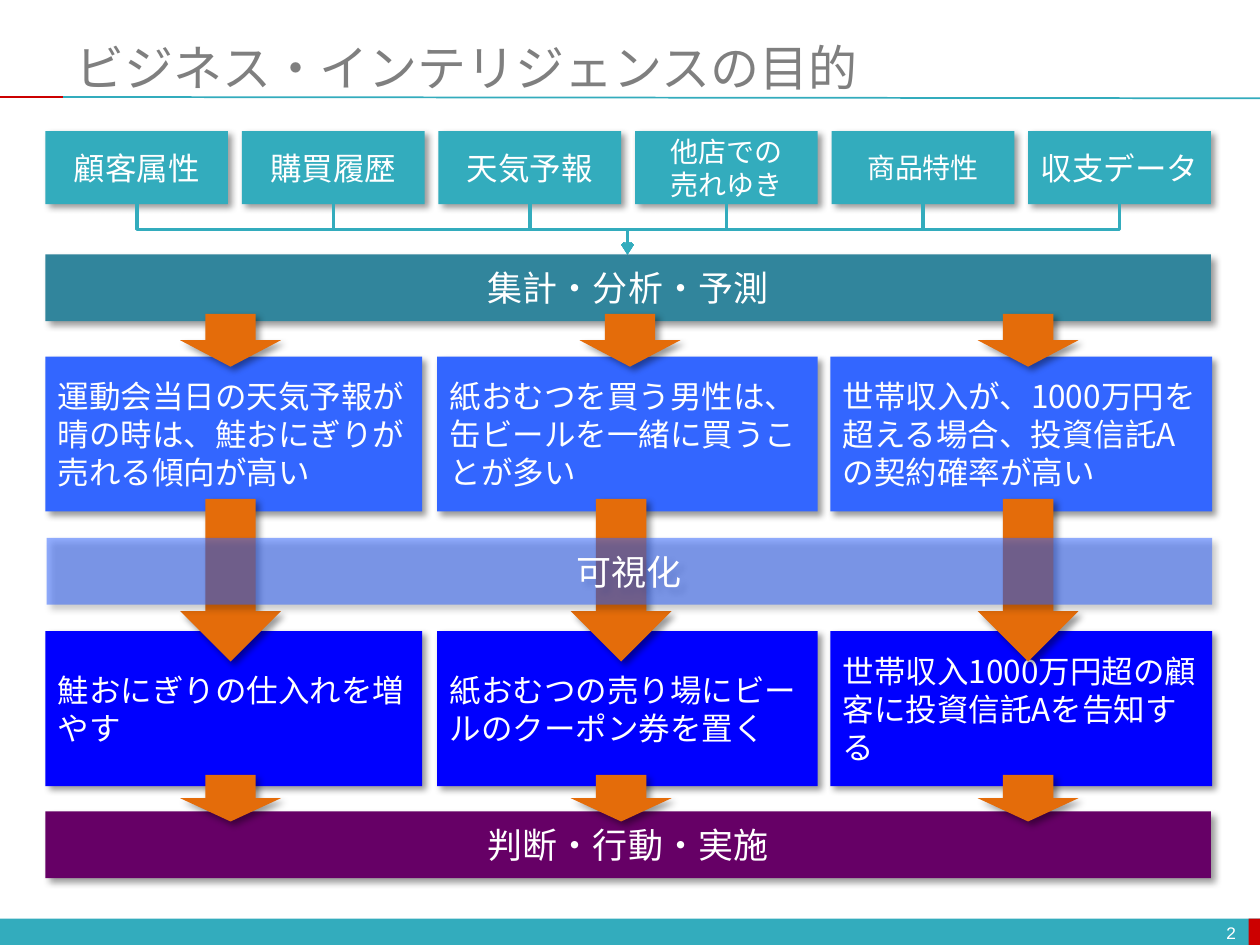
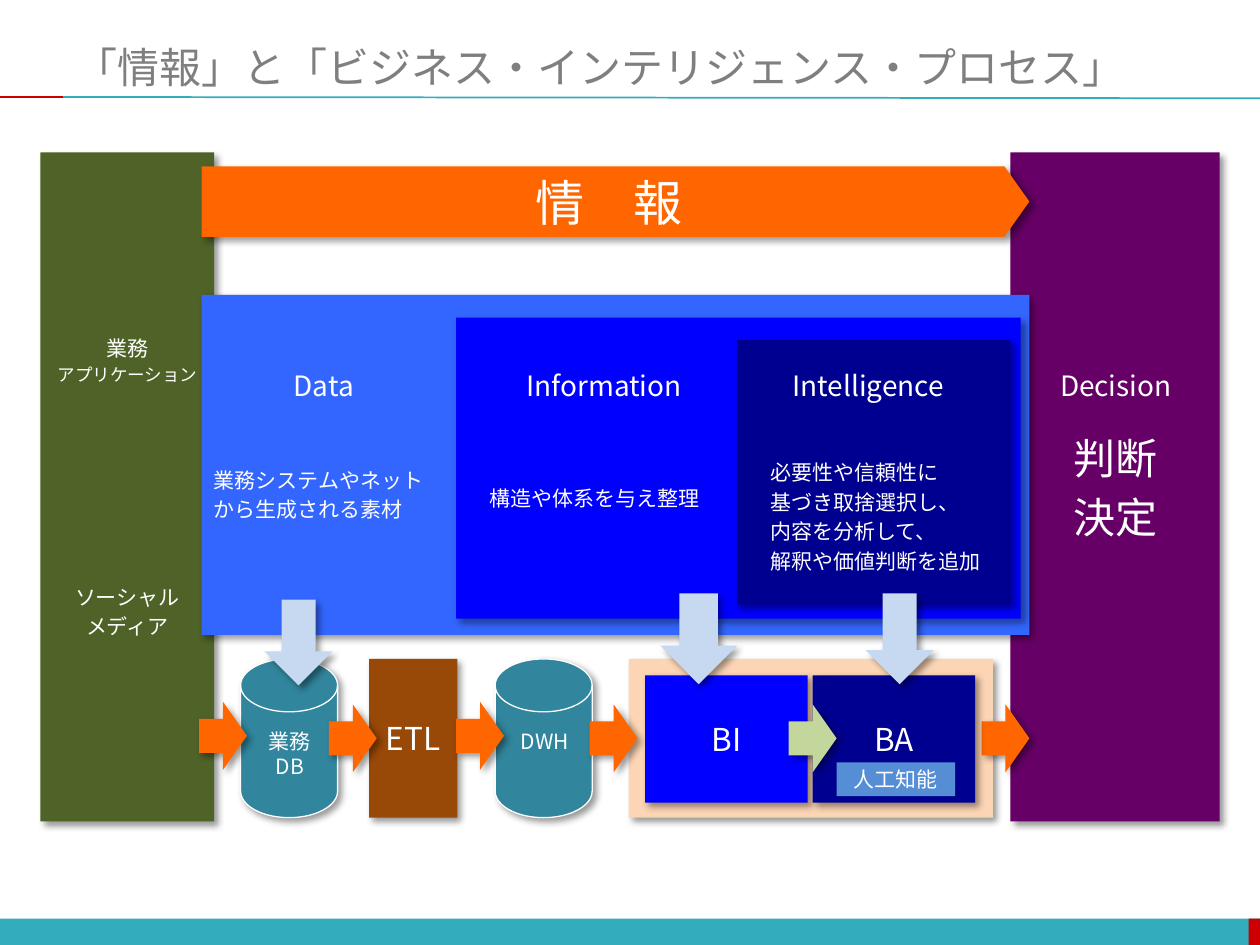
from dataclasses import dataclass

from lxml import etree
from pptx import Presentation
from pptx import util as u
from pptx.dml.color import RGBColor
from pptx.enum import shapes, text
from pptx.oxml import ns

COLUMNS, ROWS = 100, 75
CELL = u.Inches(0.1)
KIND = shapes.MSO_SHAPE
LINE = shapes.MSO_CONNECTOR
LEFT, CENTER, RIGHT = text.PP_ALIGN.LEFT, text.PP_ALIGN.CENTER, text.PP_ALIGN.RIGHT


@dataclass(frozen=True)
class Theme:
    body_font: str = "Noto Sans CJK JP"
    title_font: str = "Calibri"
    number_font: str = "Courier New"
    tiny: int = 10
    small: int = 12
    label: int = 16
    body: int = 18
    band: int = 20
    large: int = 24
    huge: int = 28
    white: str = "FFFFFF"
    gray: str = "7F7F7F"
    teal: str = "33ACBD"
    deep_teal: str = "31859C"
    red: str = "CC0000"
    sky: str = "3366FF"
    blue: str = "0000FF"
    navy: str = "000090"
    purple: str = "660066"
    rust: str = "E46C0A"
    orange: str = "FF6600"
    olive: str = "4F6228"
    brown: str = "984807"
    peach: str = "FCD5B5"
    pale_blue: str = "C6D9F1"
    pale_green: str = "C3D69B"
    steel: str = "558ED5"


THEME = Theme()


def cells(*counts):
    return [round(count * CELL) for count in counts]


def child(parent, tag, **attributes):
    return etree.SubElement(parent, ns.qn(tag), **attributes)


def write(frame, lines, size, align=CENTER, color=THEME.white, font=THEME.body_font, spread=0):
    for index, line in enumerate(lines):
        wording, points = line if isinstance(line, tuple) else (line, size)
        para = frame.paragraphs[0] if index == 0 else frame.add_paragraph()
        para.text = wording
        para.alignment = align
        para.line_spacing = u.Pt(round(points * 1.2, 1))
        if index:
            para.space_before = u.Pt(round(points * spread, 1))
        para.font.size = u.Pt(points)
        para.font.color.rgb = RGBColor.from_string(color)
        para.font.name = font
        child(para.font._element, "a:ea", typeface=font)


def add_label(page, area, lines, size, wrap=False, anchor=text.MSO_ANCHOR.TOP, **style):
    frame = page.shapes.add_textbox(*cells(*area)).text_frame
    frame.word_wrap = wrap
    frame.vertical_anchor = anchor
    write(frame, lines, size, **style)


def add_block(page, area, fill, lines=(), size=THEME.body, kind=KIND.RECTANGLE,
              shadow=True, drop=0, indent=0, **style):
    block = page.shapes.add_shape(kind, *cells(*area))
    block.fill.solid()
    block.fill.fore_color.rgb = RGBColor.from_string(fill)
    block.line.fill.background()
    block.shadow.inherit = False
    if shadow:
        effects = block._element.spPr.find(ns.qn("a:effectLst"))
        outer = child(effects, "a:outerShdw", blurRad=str(u.Pt(4)), dist=str(u.Pt(3)),
                      dir="2700000", algn="tl", rotWithShape="0")
        child(child(outer, "a:srgbClr", val="000000"), "a:alpha", val="40000")
    if lines:
        frame = block.text_frame
        frame.word_wrap = True
        frame.vertical_anchor = text.MSO_ANCHOR.MIDDLE
        frame.margin_top += round(drop * CELL)
        frame.margin_left += round(indent * CELL)
        write(frame, lines, size, **style)
    return block


def add_line(page, ends, color, width, kind=LINE.STRAIGHT):
    line = page.shapes.add_connector(kind, *cells(*ends))
    line.line.color.rgb = RGBColor.from_string(color)
    line.line.width = u.Pt(width)
    child(line._element.spPr, "a:effectLst")
    return line


def add_drop_connector(page, x1, y1, x2, y2):
    middle_x, middle_y = (x1 + x2) / 2, (y1 + y2) / 2
    reach, half = abs(x2 - x1) / 2, (y2 - y1) / 2
    rightward = x2 > x1
    side = half if rightward else -half
    ends = (middle_x + side, middle_y - reach, middle_x - side, middle_y + reach)
    connector = add_line(page, ends, THEME.teal, 2, LINE.ELBOW)
    properties = connector._element.spPr
    properties.find(ns.qn("a:xfrm")).set("rot", "16200000" if rightward else "5400000")
    child(properties.find(ns.qn("a:ln")), "a:tailEnd", type="arrow")


def add_arrows(page, lefts, top, width, height, fill, kind=KIND.DOWN_ARROW):
    for left in lefts:
        add_block(page, (left, top, width, height), fill, kind=kind)


def add_page(deck, title, size):
    page = deck.slides.add_slide(deck.slide_layouts[6])
    add_block(page, (0, 72.9, COLUMNS, 2.1), THEME.teal, shadow=False)
    add_block(page, (99.1, 72.9, 0.9, 2.1), THEME.red, shadow=False)
    add_line(page, (5, 7.7, COLUMNS, 7.8), THEME.teal, 1)
    add_line(page, (0, 7.7, 5, 7.7), THEME.red, 1)
    add_label(page, (5, 3, 95, 4.6), [title], size, wrap=True, anchor=text.MSO_ANCHOR.MIDDLE,
              align=LEFT, color=THEME.gray, font=THEME.title_font)
    return page


def build_purpose(deck):
    page = add_page(deck, "ビジネス・インテリジェンスの目的", THEME.huge)
    add_label(page, (75.8, 72.8, 23.3, 2.4), ["2"], THEME.tiny, anchor=text.MSO_ANCHOR.MIDDLE,
              wrap=True, align=RIGHT, font=THEME.number_font)

    sources = (
        (["顧客属性"], THEME.body), (["購買履歴"], THEME.body), (["天気予報"], THEME.body),
        (["他店での", "売れゆき"], THEME.label), (["商品特性"], THEME.label),
        (["収支データ"], THEME.body),
    )
    for index, (lines, size) in enumerate(sources):
        left = 3.6 + 15.6 * index
        add_block(page, (left, 10.4, 14.5, 5.8), THEME.teal, lines, size)
        add_drop_connector(page, left + 7.25, 16.2, 49.8, 20.2)

    bands = ((20.2, THEME.deep_teal, "集計・分析・予測"), (64.4, THEME.purple, "判断・行動・実施"))
    for top, fill, wording in bands:
        add_block(page, (3.6, top, 92.5, 5.3), fill, [wording], THEME.band)

    card_columns = ((3.6, 29.9), (34.7, 30.2), (65.9, 30.3))
    card_rows = (
        (28.3, THEME.sky, (
            "運動会当日の天気予報が晴の時は、鮭おにぎりが売れる傾向が高い",
            "紙おむつを買う男性は、缶ビールを一緒に買うことが多い",
            "世帯収入が、1000万円を超える場合、投資信託Aの契約確率が高い")),
        (50.1, THEME.blue, (
            "鮭おにぎりの仕入れを増やす",
            "紙おむつの売り場にビールのクーポン券を置く",
            "世帯収入1000万円超の顧客に投資信託Aを告知する")),
    )
    for top, fill, findings in card_rows:
        for (left, width), finding in zip(card_columns, findings):
            add_block(page, (left, top, width, 12.3), fill, [finding], align=LEFT)

    add_arrows(page, (14.3, 46, 77.6), 24.9, 8, 4.2, THEME.rust)
    add_arrows(page, (14.3, 45.3, 77.6), 39.6, 8, 12.9, THEME.rust)
    veil = add_block(page, (3.7, 42.7, 92.5, 5.3), THEME.sky, ["可視化"], THEME.band)
    color = veil._element.spPr.find(ns.qn("a:solidFill"))[0]
    child(color, "a:alpha", val="53000")
    add_arrows(page, (14.3, 45.3, 77.6), 61.5, 8, 3.7, THEME.rust)


def build_process(deck):
    page = add_page(deck, "「情報」と「ビジネス・インテリジェンス・プロセス」", THEME.large)
    origin = add_block(page, (3.2, 12.1, 13.8, 53.1), THEME.olive,
                       ["業務", ("アプリケーション", THEME.tiny), "ソーシャル", "メディア"],
                       THEME.small, spread=0.2)
    origin.text_frame.margin_left = origin.text_frame.margin_right = 0
    origin.text_frame.paragraphs[2].space_before = u.Pt(114)
    add_block(page, (80.2, 12.1, 16.6, 53.1), THEME.purple, ["判断", "決定"],
              THEME.large, spread=0.2)

    stages = (
        ((16, 23.4, 65.7, 27), THEME.sky, 4.7, 0,
         ["業務システムやネット", "から生成される素材"]),
        ((36.2, 25.2, 44.8, 23.9), THEME.blue, 4.7, 1.67, ["構造や体系を与え整理"]),
        ((58.5, 27, 21.7, 21), THEME.navy, 7, 1.67,
         ["必要性や信頼性に", "基づき取捨選択し、", "内容を分析して、", "解釈や価値判断を追加"]),
    )
    for area, fill, drop, indent, lines in stages:
        add_block(page, area, fill, lines, THEME.small, drop=drop, indent=indent,
                  align=LEFT, spread=0.2)

    banner = add_block(page, (16, 13.2, 65.7, 5.6), THEME.orange, ["情　報"], THEME.huge,
                       kind=KIND.PENTAGON)
    banner.adjustments[0] = 0.355

    for left in (19.1, 39.3):
        disk = add_block(page, (left, 52.3, 7.7, 12.6), THEME.deep_teal,
                         kind=KIND.FLOWCHART_MAGNETIC_DISK)
        disk.line.color.rgb = RGBColor.from_string(THEME.white)
        disk.line.width = u.Pt(0.75)
    add_block(page, (29.3, 52.3, 7, 12.6), THEME.brown, ["ETL"])
    add_block(page, (49.9, 52.3, 28.9, 12.6), THEME.peach)

    headings = ((22.1, 7.2, "Data"), (40.5, 14.9, "Information"),
                (61.6, 14.6, "Intelligence"), (83, 11.1, "Decision"))
    for left, width, wording in headings:
        add_label(page, (left, 28.8, width, 3.7), [wording], THEME.label)
    for left, width, wording in ((19.5, 7, "業務DB"), (39.5, 7.5, "DWH")):
        add_label(page, (left, 57.3, width, 3), [wording], THEME.small, wrap=True)

    add_arrows(page, (15.8, 36.2), 55.7, 3.8, 5.4, THEME.orange, KIND.RIGHT_ARROW)
    add_arrows(page, (26.1, 46.8, 77.9), 55.9, 3.8, 5.4, THEME.orange, KIND.RIGHT_ARROW)
    for left, fill, wording in ((51.2, THEME.blue, "BI"), (64.5, THEME.navy, "BA")):
        add_block(page, (left, 53.6, 12.9, 10.1), fill, [wording])
    for left, top, width, height in ((21, 47.6, 5.4, 6.8), (68.7, 47.1, 5.4, 7.2),
                                     (52.4, 47.1, 6.1, 7.2)):
        add_arrows(page, [left], top, width, height, THEME.pale_blue)
    add_arrows(page, [62.6], 55.9, 3.8, 5.4, THEME.pale_green, KIND.RIGHT_ARROW)
    add_block(page, (66.4, 60.5, 9.4, 2.7), THEME.steel, ["人工知能"], THEME.small, shadow=False)


def main():
    deck = Presentation()
    deck.slide_width, deck.slide_height = cells(COLUMNS, ROWS)
    build_purpose(deck)
    build_process(deck)
    deck.save("out.pptx")


if __name__ == "__main__":
    main()
